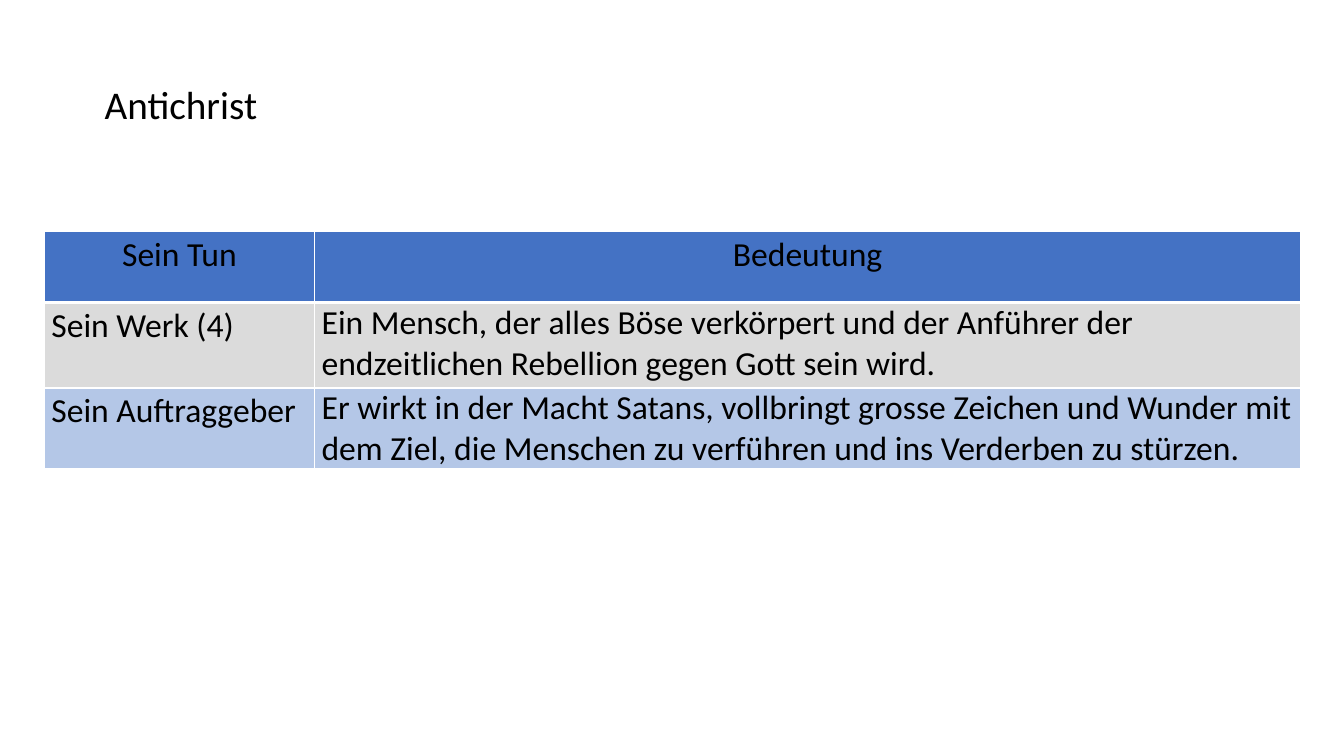
import dataclasses
import typing

import pptx
import pptx.dml.color
import pptx.enum.text
import pptx.oxml
import pptx.oxml.ns
import pptx.util

PX = 9144


@dataclasses.dataclass(frozen=True)
class Theme:
    font: str = "Calibri"
    title_size: int = 28
    table_size: int = 24
    text: str = "000000"
    border: str = "FFFFFF"
    header: str = "4472C4"
    gray: str = "DBDBDB"
    blue: str = "B4C7E7"


@dataclasses.dataclass(frozen=True)
class TableRow:
    deed: str
    meaning: str
    height: int
    fill: str
    is_header: bool = False


THEME = Theme()
COLUMN_WIDTHS = (268, 978)
ROWS = (
    TableRow("Sein Tun", "Bedeutung", 70, THEME.header, True),
    TableRow(
        "Sein Werk (4)",
        "Ein Mensch, der alles Böse verkörpert und der Anführer der "
        "endzeitlichen Rebellion gegen Gott sein wird.",
        85,
        THEME.gray,
    ),
    TableRow(
        "Sein Auftraggeber",
        "Er wirkt in der Macht Satans, vollbringt grosse Zeichen und Wunder mit "
        "dem Ziel, die Menschen zu verführen und ins Verderben zu stürzen.",
        70,
        THEME.blue,
    ),
)


def px(length: int) -> pptx.util.Emu:
    return pptx.util.Emu(length * PX)


def apply_format(target: typing.Any, values: dict[str, typing.Any]) -> None:
    for name, value in values.items():
        setattr(target, name, value)


def write_text(paragraph: typing.Any, text: str, size: int) -> None:
    run = paragraph.add_run()
    run.text = text
    apply_format(run.font, {"name": THEME.font, "size": pptx.util.Pt(size), "bold": False})
    run.font.color.rgb = pptx.dml.color.RGBColor.from_string(THEME.text)


def draw_borders(cell: typing.Any, bottom: int, top: int) -> None:
    properties = cell._tc.get_or_add_tcPr()
    widths = {"lnL": 1, "lnR": 1, "lnT": top, "lnB": bottom}
    for position, (side, width) in enumerate(widths.items()):
        line = pptx.oxml.parse_xml(
            f'<a:{side} {pptx.oxml.ns.nsdecls("a")} w="{pptx.util.Pt(width)}">'
            f'<a:solidFill><a:srgbClr val="{THEME.border}"/></a:solidFill></a:{side}>'
        )
        properties.insert(position, line)


def draw_cell(cell: typing.Any, text: str, row: TableRow, spacing: float, top: int) -> None:
    apply_format(cell, {
        "margin_left": px(7),
        "margin_right": px(7),
        "margin_top": 0,
        "margin_bottom": 0,
    })
    cell.fill.solid()
    cell.fill.fore_color.rgb = pptx.dml.color.RGBColor.from_string(row.fill)
    alignment = pptx.enum.text.PP_ALIGN
    paragraph = cell.text_frame.paragraphs[0]
    apply_format(paragraph, {
        "alignment": alignment.CENTER if row.is_header else alignment.LEFT,
        "line_spacing": spacing,
    })
    write_text(paragraph, text, THEME.table_size)
    draw_borders(cell, 3 if row.is_header else 1, top)


def draw_title(slide: typing.Any) -> None:
    shape = slide.shapes.add_textbox(px(94), px(75), px(192), px(57))
    apply_format(shape.text_frame, {
        "word_wrap": True,
        "auto_size": pptx.enum.text.MSO_AUTO_SIZE.SHAPE_TO_FIT_TEXT,
    })
    write_text(shape.text_frame.paragraphs[0], "Antichrist", THEME.title_size)


def draw_table(slide: typing.Any) -> None:
    height = sum(row.height for row in ROWS)
    table = slide.shapes.add_table(
        len(ROWS), len(COLUMN_WIDTHS), px(44), px(230), px(sum(COLUMN_WIDTHS)), px(height)
    ).table
    for column, width in zip(table.columns, COLUMN_WIDTHS):
        column.width = px(width)
    for index, row in enumerate(ROWS):
        table.rows[index].height = px(row.height)
        top = 3 if index and ROWS[index - 1].is_header else 1
        meaning_spacing = 1.07 if row.is_header else 1.0
        draw_cell(table.cell(index, 0), row.deed, row, 1.07, top)
        draw_cell(table.cell(index, 1), row.meaning, row, meaning_spacing, top)


def main() -> None:
    presentation = pptx.Presentation()
    apply_format(presentation, {"slide_width": px(1333), "slide_height": px(750)})
    slide = presentation.slides.add_slide(presentation.slide_layouts[6])
    draw_title(slide)
    draw_table(slide)
    presentation.save("out.pptx")


if __name__ == "__main__":
    main()
